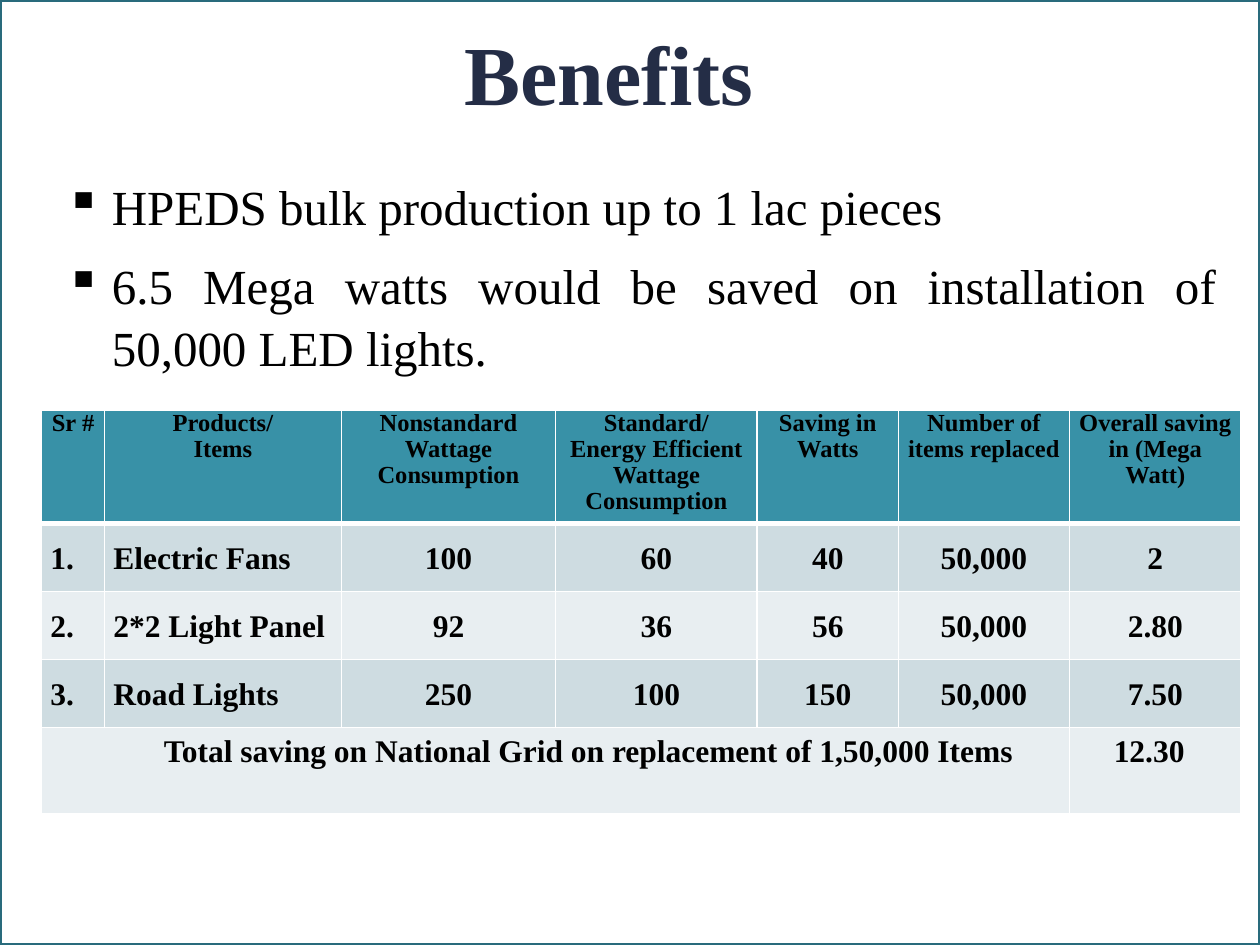
from lxml import etree
from pptx import Presentation
from pptx.dml.color import RGBColor
from pptx.enum.shapes import MSO_SHAPE as Shape
from pptx.enum.text import MSO_ANCHOR as Anchor, PP_ALIGN as Align
from pptx.oxml.ns import qn
from pptx.util import Inches, Pt

FONT = "Times New Roman"
BLACK, WHITE = "000000", "FFFFFF"
HEADER_FILL, BAND_FILLS = "3891A7", ("CEDCE1", "E8EEF1")

BENEFITS = [
    "HPEDS bulk production up to 1 lac pieces",
    "6.5 Mega watts would be saved on installation of 50,000 LED lights.",
]
COLUMN_WIDTHS = [0.5, 1.88, 1.7, 1.6, 1.12, 1.36, 1.36]
ROW_HEIGHTS = [0.85, 0.54, 0.54, 0.54, 0.68]
HEADINGS = [
    "Sr #",
    "Products/\nItems",
    "Nonstandard Wattage Consumption",
    "Standard/\nEnergy Efficient Wattage Consumption",
    "Saving in Watts",
    "Number of items replaced",
    "Overall saving in (Mega Watt)",
]
PRODUCTS = [
    ["1.", "Electric Fans", "100", "60", "40", "50,000", "2"],
    ["2.", "2*2 Light Panel", "92", "36", "56", "50,000", "2.80"],
    ["3.", "Road Lights", "250", "100", "150", "50,000", "7.50"],
]
PRODUCT_ALIGNS = [Align.JUSTIFY, Align.LEFT] + [Align.CENTER] * 5
TOTAL_LABEL = "Total saving on National Grid on replacement of 1,50,000 Items"
TOTAL_SAVING = "12.30"


def color(hex_value):
    return RGBColor.from_string(hex_value)


def style_paragraph(paragraph, size, align, bold=False, hex_value=BLACK, spacing=1.0):
    font = paragraph.font
    font.name, font.size, font.bold = FONT, Pt(size), bold
    font.color.rgb = color(hex_value)
    paragraph.alignment = align
    paragraph.line_spacing = spacing


def add_bullet(paragraph, margin, indent):
    properties = paragraph._p.get_or_add_pPr()
    properties.set("marL", str(Inches(margin)))
    properties.set("indent", str(Inches(indent)))
    bullet = etree.SubElement(properties, qn("a:buChar"))
    bullet.set("char", "▪")
    # The default run properties must follow the bullet in the schema.
    defaults = properties.find(qn("a:defRPr"))
    if defaults is not None:
        properties.append(defaults)


def add_frame(slide, left, top, width, height):
    frame = slide.shapes.add_shape(
        Shape.RECTANGLE, Inches(left), Inches(top), Inches(width), Inches(height))
    frame.shadow.inherit = False
    frame.fill.solid()
    frame.fill.fore_color.rgb = color(WHITE)
    frame.line.color.rgb = color("296B7C")
    frame.line.width = Pt(2)


def add_text_frame(slide, left, top, width, height):
    text_frame = slide.shapes.add_textbox(
        Inches(left), Inches(top), Inches(width), Inches(height)).text_frame
    text_frame.word_wrap = True
    return text_frame


def add_title(slide, left, top, width, height):
    title = add_text_frame(slide, left, top, width, height)
    title.vertical_anchor = Anchor.MIDDLE
    title.text = "Benefits"
    style_paragraph(title.paragraphs[0], 48, Align.CENTER, True, "242D46", 0.9)


def add_benefits(slide, left, top, width, height):
    body = add_text_frame(slide, left, top, width, height)
    body.text = "\n".join(BENEFITS)
    for benefit in body.paragraphs:
        style_paragraph(benefit, 28, Align.JUSTIFY, spacing=1.05)
        benefit.space_before = Pt(10)
        add_bullet(benefit, 0.46, -0.37)


def set_borders(cell, bottom_width):
    properties = cell._tc.get_or_add_tcPr()
    widths = {"a:lnL": 1, "a:lnR": 1, "a:lnT": 1, "a:lnB": bottom_width}
    for position, (side, width) in enumerate(widths.items()):
        line = etree.Element(qn(side), w=str(Pt(width)))
        fill = etree.SubElement(line, qn("a:solidFill"))
        etree.SubElement(fill, qn("a:srgbClr"), val=WHITE)
        properties.insert(position, line)


def fill_cell(cell, text, fill, size=18, align=Align.LEFT, spacing=1.0,
              left=0.07, top=0, bottom_border=1):
    cell.text = text
    cell.margin_left, cell.margin_right = Inches(left), Inches(0.07)
    cell.margin_top = cell.margin_bottom = Inches(top)
    for paragraph in cell.text_frame.paragraphs:
        style_paragraph(paragraph, size, align, True, spacing=spacing)
    cell.fill.solid()
    cell.fill.fore_color.rgb = color(fill)
    set_borders(cell, bottom_border)


def add_savings_table(slide, left, top, width, height):
    table = slide.shapes.add_table(
        len(ROW_HEIGHTS), len(COLUMN_WIDTHS),
        Inches(left), Inches(top), Inches(width), Inches(height)).table
    for column, column_width in zip(table.columns, COLUMN_WIDTHS):
        column.width = Inches(column_width)
    for row, row_height in zip(table.rows, ROW_HEIGHTS):
        row.height = Inches(row_height)

    for column, heading in enumerate(HEADINGS):
        fill_cell(table.cell(0, column), heading, HEADER_FILL, 14, Align.CENTER,
                  0.96, bottom_border=3)
    for row, product in enumerate(PRODUCTS, start=1):
        for column, (value, align) in enumerate(zip(product, PRODUCT_ALIGNS)):
            fill_cell(table.cell(row, column), value, BAND_FILLS[(row - 1) % 2],
                      align=align, spacing=1.5)

    total_row, last_column = len(ROW_HEIGHTS) - 1, len(COLUMN_WIDTHS) - 1
    label_cell = table.cell(total_row, 0)
    label_cell.merge(table.cell(total_row, last_column - 1))
    fill_cell(label_cell, TOTAL_LABEL, BAND_FILLS[1], left=0.97, top=0.05)
    fill_cell(table.cell(total_row, last_column), TOTAL_SAVING, BAND_FILLS[1],
              left=0.35, top=0.05)


def main():
    presentation = Presentation()
    presentation.slide_width, presentation.slide_height = Inches(10), Inches(7.5)
    slide = presentation.slides.add_slide(presentation.slide_layouts[6])
    add_frame(slide, 0, 0, 10, 7.5)
    add_title(slide, 1.67, 0.25, 6.33, 0.75)
    add_benefits(slide, 0.33, 1.33, 9.42, 5.5)
    add_savings_table(slide, 0.33, 3.26, sum(COLUMN_WIDTHS), sum(ROW_HEIGHTS))
    presentation.save("out.pptx")


if __name__ == "__main__":
    main()
